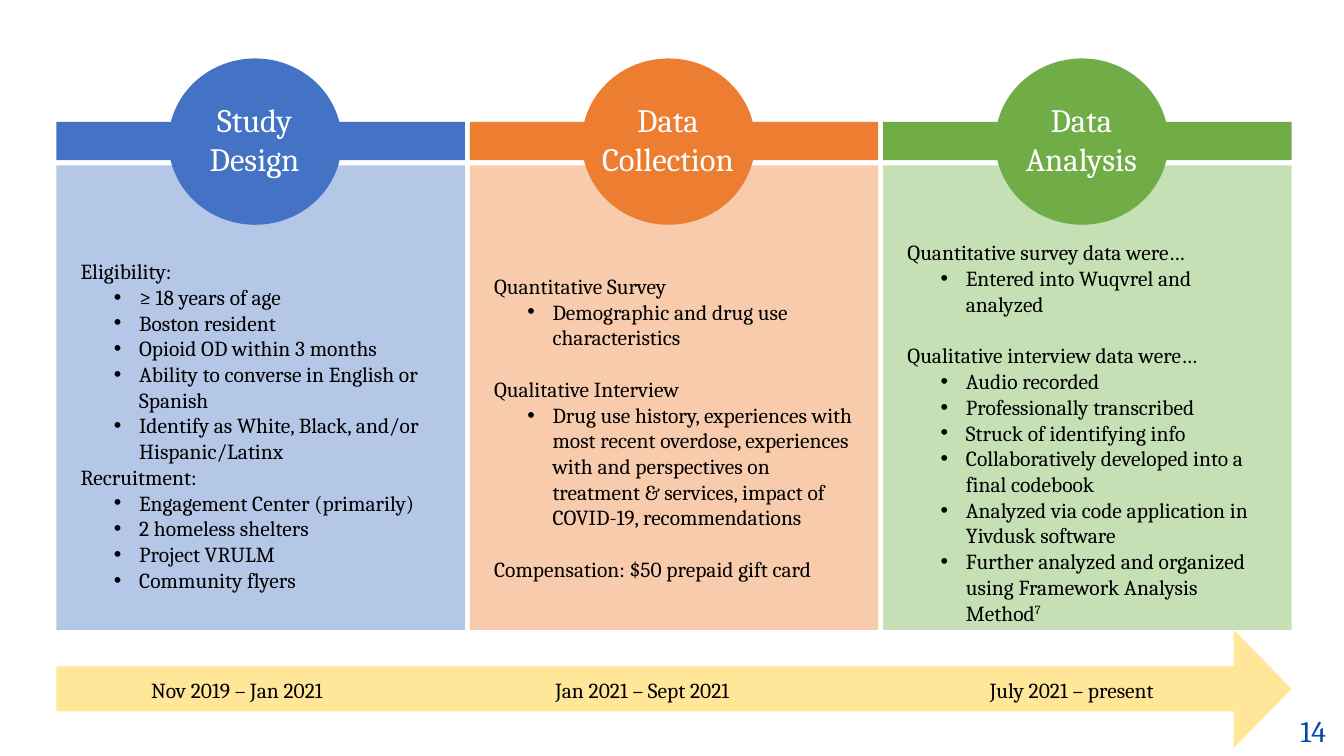
from lxml import etree
from pptx import Presentation
from pptx.dml.color import RGBColor
from pptx.enum.shapes import MSO_SHAPE
from pptx.enum.text import MSO_ANCHOR, MSO_AUTO_SIZE, PP_ALIGN
from pptx.oxml.ns import qn
from pptx.util import Pt

RECTANGLE, OVAL, ARROW = MSO_SHAPE.RECTANGLE, MSO_SHAPE.OVAL, MSO_SHAPE.RIGHT_ARROW
MIDDLE, TOP = MSO_ANCHOR.MIDDLE, MSO_ANCHOR.TOP
LEFT, CENTER = PP_ALIGN.LEFT, PP_ALIGN.CENTER
NO_FIT = MSO_AUTO_SIZE.NONE
PX = 9144
COLUMN_LEFT, COLUMN_STEP, COLUMN_WIDTH = 56, 410, 405
BODY_SIZE, BLANK_LINE = 15.3, 18.5
COLORS = {
    "blue": "4472C4", "pale blue": "B4C7E7",
    "orange": "ED7D31", "pale orange": "F8CBAD",
    "green": "70AD47", "pale green": "C5E0B4",
    "yellow": "FFE699", "navy": "004AAE", "black": "000000", "white": "FFFFFF",
}

STAGES = [
    ("Study Design", "blue", 55, [
        ("Eligibility:", 0, [
            "≥ 18 years of age",
            "Boston resident",
            "Opioid OD within 3 months",
            "Ability to converse in English or Spanish",
            "Identify as White, Black, and/or Hispanic/Latinx",
        ]),
        ("Recruitment:", 0, [
            "Engagement Center (primarily)",
            "2 homeless shelters",
            "Project VRULM",
            "Community flyers",
        ]),
    ]),
    ("Data Collection", "orange", 59, [
        ("Quantitative Survey", 0, ["Demographic and drug use characteristics"]),
        ("Qualitative Interview", BLANK_LINE, [
            "Drug use history, experiences with most recent overdose, experiences with "
            "and perspectives on treatment & services, impact of COVID-19, recommendations",
        ]),
        ("Compensation: $50 prepaid gift card", BLANK_LINE, []),
    ]),
    ("Data Analysis", "green", 69, [
        ("Quantitative survey data were…", 0, ["Entered into Wuqvrel and analyzed"]),
        ("Qualitative interview data were…", BLANK_LINE, [
            "Audio recorded",
            "Professionally transcribed",
            "Struck of identifying info",
            "Collaboratively developed into a final codebook",
            "Analyzed via code application in Yivdusk software",
            "Further analyzed and organized using Framework Analysis Method",
        ]),
    ]),
]
DATES = [
    ("Nov 2019 – Jan 2021", 140, 229),
    ("Jan 2021 – Sept 2021", 541, 247),
    ("July 2021 – present", 972, 247),
]
LABELS = [(text, (left, 667, width, 36), BODY_SIZE, "black", LEFT, TOP, (10, 5))
          for text, left, width in DATES]
LABELS.append(("14", (1246, 701, 113, 38), 21.3, "navy", CENTER, TOP, (0, 0)))


def add_block(kind, place, color):
    block = slide.shapes.add_shape(kind, *(length * PX for length in place))
    block.shadow.inherit = False
    block.fill.solid()
    block.fill.fore_color.rgb = RGBColor.from_string(COLORS[color])
    block.line.fill.background()
    return block


def add_span(para, text, size, color):
    span = para.add_run()
    span.text = text
    formats = {"name": "Cambria", "size": Pt(size), "bold": False}
    for name, value in formats.items():
        setattr(span.font, name, value)
    span.font.color.rgb = RGBColor.from_string(COLORS[color])
    return span


deck = Presentation()
deck.slide_width, deck.slide_height = 1333 * PX, 750 * PX
slide = deck.slides.add_slide(deck.slide_layouts.get_by_name("Comparison"))
bodies = list(slide.placeholders)
for unused in (bodies.pop(0), bodies.pop()):
    unused.element.getparent().remove(unused.element)

arrow = add_block(ARROW, (56, 625, 1225, 117), "yellow")
arrow.adjustments[0], arrow.adjustments[1] = 0.381, 0.49

for column, (title, color, top_inset, sections) in enumerate(STAGES):
    left = COLUMN_LEFT + column * COLUMN_STEP
    add_block(RECTANGLE, (left, 121, COLUMN_WIDTH, 38), color)

    panel = bodies[column]
    formats = {"left": left, "top": 164, "width": COLUMN_WIDTH, "height": 461}
    for name, value in formats.items():
        setattr(panel, name, value * PX)
    panel.fill.solid()
    panel.fill.fore_color.rgb = RGBColor.from_string(COLORS["pale " + color])
    frame = panel.text_frame
    formats = {
        "word_wrap": True, "auto_size": NO_FIT, "vertical_anchor": MIDDLE,
        "margin_left": 24 * PX, "margin_right": 24 * PX,
        "margin_top": top_inset * PX, "margin_bottom": 0,
    }
    for name, value in formats.items():
        setattr(frame, name, value)

    rows = []
    for heading, gap, items in sections:
        rows.append((heading, gap, 0))
        rows.extend((item, 0, 1) for item in items)
    for index, (text, gap, level) in enumerate(rows):
        para = frame.add_paragraph() if index else frame.paragraphs[0]
        formats = {"level": level, "alignment": LEFT, "line_spacing": 1.0,
                   "space_before": Pt(gap), "space_after": Pt(0)}
        for name, value in formats.items():
            setattr(para, name, value)
        add_span(para, text, BODY_SIZE, "black")
        properties = para._p.get_or_add_pPr()
        properties.set("marL", str(58 * PX * level))
        properties.set("indent", str(-25 * PX * level))
        if level:
            etree.SubElement(properties, qn("a:buFont"), typeface="Arial")
            etree.SubElement(properties, qn("a:buChar"), char="•")
        else:
            etree.SubElement(properties, qn("a:buNone"))

    add_block(OVAL, (left + 111, 58, 172, 165), color)
    LABELS.append((title, (left + 101, 119, 191, 38), 23.3, "white", CENTER, MIDDLE, (13, 13)))

footnote = add_span(para, "7", BODY_SIZE, "black")
footnote.font._element.set("baseline", "30000")

for text, place, size, color, alignment, anchor, (side, edge) in LABELS:
    box = slide.shapes.add_textbox(*(length * PX for length in place))
    formats = {
        "word_wrap": True, "auto_size": NO_FIT, "vertical_anchor": anchor,
        "margin_left": side * PX, "margin_right": side * PX,
        "margin_top": edge * PX, "margin_bottom": edge * PX,
    }
    for name, value in formats.items():
        setattr(box.text_frame, name, value)
    para = box.text_frame.paragraphs[0]
    para.alignment = alignment
    if color == "navy":
        para.line_spacing = Pt(29.9)
    add_span(para, text, size, color)

deck.save("out.pptx")
